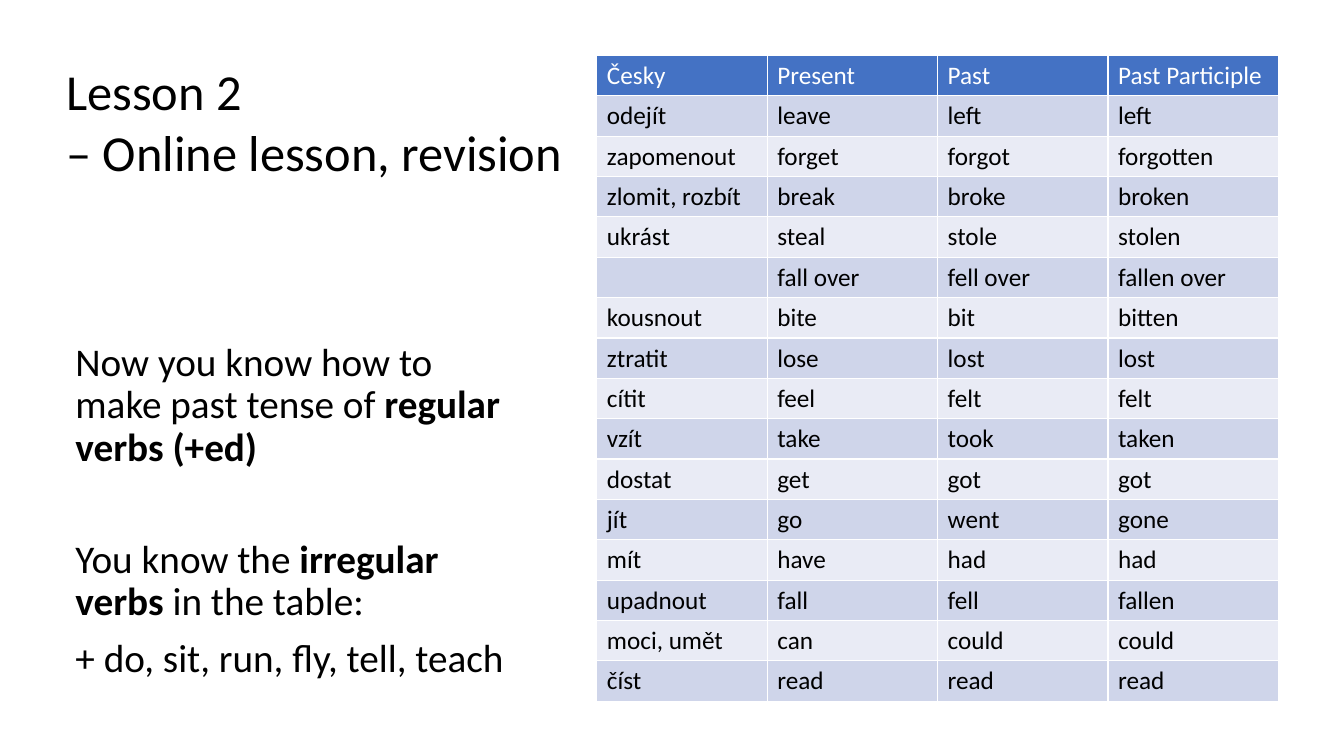
from pptx import Presentation
from pptx.dml.color import RGBColor
from pptx.enum.text import MSO_ANCHOR
from pptx.util import Inches, Pt

TOP = MSO_ANCHOR.TOP
FONT = "Calibri"
BLACK, WHITE = "000000", "FFFFFF"
HEADER_FILL = "4472C4"
BAND_FILLS = ("CFD5EA", "E9EBF5")

TITLE_LINES = ["Lesson 2", "– Online lesson, revision"]
NOTES = [
    ([("Now you know how to make past tense of ", False),
      ("regular verbs (+ed)", True)], 10),
    ([("You know the ", False), ("irregular verbs ", True),
      ("in the table:", False)], 50),
    ([("+ do, sit, run, fly, tell, teach", False)], 10),
]
VERBS = [
    ("Česky", "Present", "Past", "Past Participle"),
    ("odejít", "leave", "left", "left"),
    ("zapomenout", "forget", "forgot", "forgotten"),
    ("zlomit, rozbít", "break", "broke", "broken"),
    ("ukrást", "steal", "stole", "stolen"),
    ("", "fall over", "fell over", "fallen over"),
    ("kousnout", "bite", "bit", "bitten"),
    ("ztratit", "lose", "lost", "lost"),
    ("cítit", "feel", "felt", "felt"),
    ("vzít", "take", "took", "taken"),
    ("dostat", "get", "got", "got"),
    ("jít", "go", "went", "gone"),
    ("mít", "have", "had", "had"),
    ("upadnout", "fall", "fell", "fallen"),
    ("moci, umět", "can", "could", "could"),
    ("číst", "read", "read", "read"),
]


def color(hex_code):
    """Turn a hex string into a colour."""
    return RGBColor.from_string(hex_code)


def add_text(paragraph, text, size=18, bold=False, ink=BLACK):
    """Append a formatted run to a paragraph."""
    run = paragraph.add_run()
    run.text = text
    run.font.name = FONT
    run.font.size = Pt(size)
    run.font.bold = bold
    run.font.color.rgb = color(ink)


def add_paragraphs(slide, box, count):
    """Place a wrapping text frame in the box and return its paragraphs."""
    frame = slide.shapes.add_textbox(*map(Inches, box)).text_frame
    frame.word_wrap = True
    frame.vertical_anchor = TOP
    for _ in range(count - 1):
        frame.add_paragraph()
    return frame.paragraphs


def add_title(slide, box):
    """Write the lesson heading, one paragraph per line."""
    for paragraph, line in zip(add_paragraphs(slide, box, len(TITLE_LINES)), TITLE_LINES):
        add_text(paragraph, line, size=36)


def add_notes(slide, box):
    """Write the grammar reminders with their bold key terms."""
    for paragraph, (parts, gap) in zip(add_paragraphs(slide, box, len(NOTES)), NOTES):
        paragraph.line_spacing = 0.9
        paragraph.space_before = Pt(gap)
        for text, bold in parts:
            add_text(paragraph, text, size=28, bold=bold)


def add_verb_table(slide, box):
    """Fill the box with the verb table: a header and alternating bands."""
    verb_table = slide.shapes.add_table(
        len(VERBS), len(VERBS[0]), *map(Inches, box)).table
    for row, forms in enumerate(VERBS):
        fill = BAND_FILLS[(row - 1) % 2] if row else HEADER_FILL
        for column, form in enumerate(forms):
            cell = verb_table.cell(row, column)
            cell.fill.solid()
            cell.fill.fore_color.rgb = color(fill)
            if form:
                add_text(cell.text_frame.paragraphs[0], form,
                         ink=BLACK if row else WHITE)


def main():
    """Build the lesson slide and save it."""
    deck = Presentation()
    deck.slide_width, deck.slide_height = Inches(13.33), Inches(7.5)
    slide = deck.slides.add_slide(deck.slide_layouts[6])
    add_notes(slide, (0.65, 3.35, 4.49, 3.6))
    add_verb_table(slide, (5.92, 0.55, 6.76, 6.4))
    add_title(slide, (0.56, 0.55, 5.36, 1.31))
    deck.save("out.pptx")


if __name__ == "__main__":
    main()
